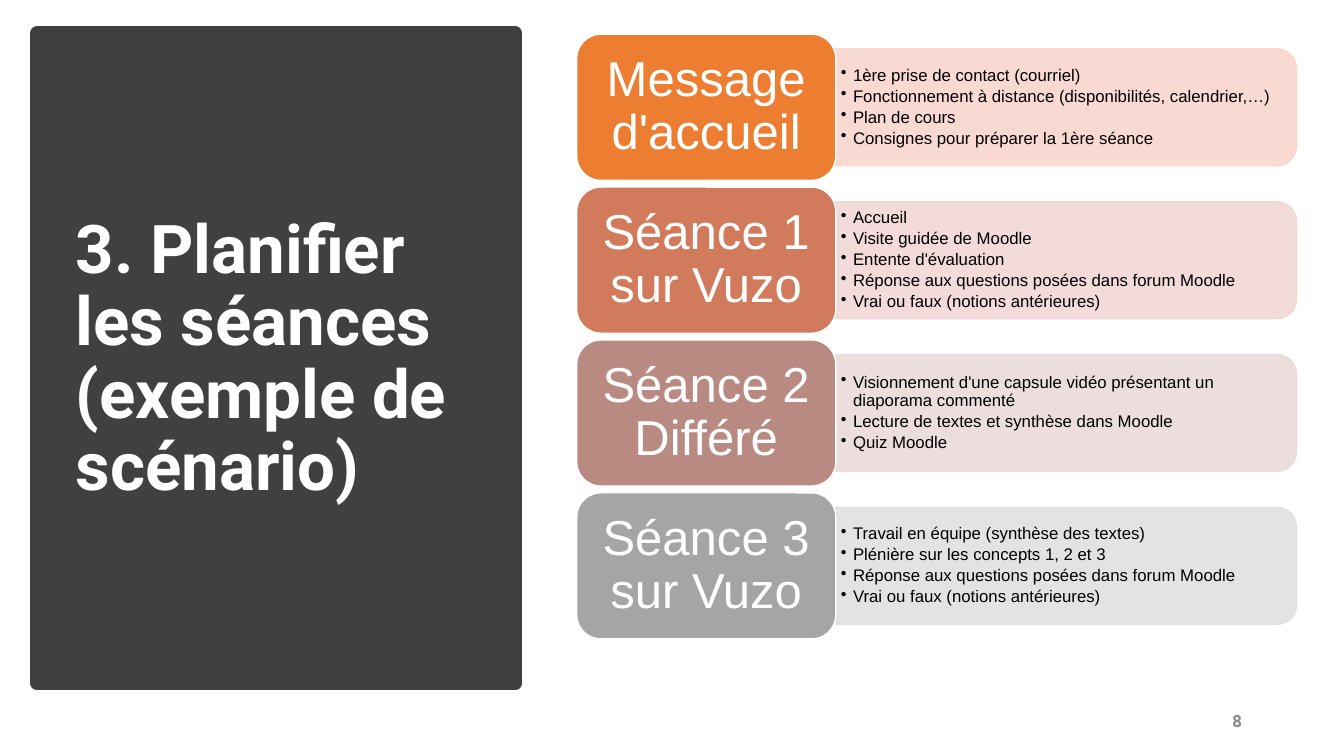
from lxml import etree
from pptx import Presentation, util as u
from pptx.dml.color import RGBColor
from pptx.enum import shapes, text
from pptx.oxml import ns

WHITE = RGBColor(0xFF, 0xFF, 0xFF)
BLACK = RGBColor(0x00, 0x00, 0x00)
DARK = RGBColor(0x40, 0x40, 0x40)
GREY = RGBColor(0x89, 0x89, 0x89)
HEAD = "Roboto"
BODY = "Arial"
KIND = shapes.MSO_SHAPE
ALIGN = text.PP_ALIGN

STEPS = [
    ("Message d'accueil", RGBColor(0xED, 0x7D, 0x31), RGBColor(0xF8, 0xD7, 0xCE), [
        "1ère prise de contact (courriel)",
        "Fonctionnement à distance (disponibilités, calendrier,…)",
        "Plan de cours",
        "Consignes pour préparer la 1ère séance"]),
    ("Séance 1 sur Vuzo", RGBColor(0xD1, 0x7B, 0x5C), RGBColor(0xF1, 0xD8, 0xD4), [
        "Accueil",
        "Visite guidée de Moodle",
        "Entente d'évaluation",
        "Réponse aux questions posées dans forum Moodle",
        "Vrai ou faux (notions antérieures)"]),
    ("Séance 2 Différé", RGBColor(0xB9, 0x8A, 0x82), RGBColor(0xE9, 0xDB, 0xDA), [
        "Visionnement d'une capsule vidéo présentant un diaporama commenté",
        "Lecture de textes et synthèse dans Moodle",
        "Quiz Moodle"]),
    ("Séance 3 sur Vuzo", RGBColor(0xA5, 0xA5, 0xA5), RGBColor(0xE1, 0xE1, 0xE1), [
        "Travail en équipe (synthèse des textes)",
        "Plénière sur les concepts 1, 2 et 3",
        "Réponse aux questions posées dans forum Moodle",
        "Vrai ou faux (notions antérieures)"]),
]


class Deck:
    COLS = ROWS = 100

    def __init__(self):
        self.prs = Presentation()
        self.prs.slide_width = u.Inches(13.33)
        self.prs.slide_height = u.Inches(7.5)
        self.slide = self.prs.slides.add_slide(self.prs.slide_layouts[6])

    def col(self, n):
        return round(self.prs.slide_width * n / self.COLS)

    def row(self, n):
        return round(self.prs.slide_height * n / self.ROWS)

    def area(self, x, y, w, h):
        return self.col(x), self.row(y), self.col(w), self.row(h)

    def shape(self, kind, area, fill, line, width=1, turn=0, alpha=None):
        x, y, w, h = area
        if turn:
            x, y, w, h = x + (w - h) // 2, y + (h - w) // 2, h, w
        item = self.slide.shapes.add_shape(kind, x, y, w, h)
        item.rotation = turn
        item.shadow.inherit = False
        item.fill.solid()
        item.fill.fore_color.rgb = fill
        item.line.color.rgb = line
        item.line.width = u.Pt(width)
        if alpha:
            for tone in item._element.spPr.iter(ns.qn("a:srgbClr")):
                etree.SubElement(tone, ns.qn("a:alpha")).set("val", str(alpha * 1000))
        return item

    def fill_text(self, item, lines, font, size, color, bold=False, align=ALIGN.LEFT,
                  lead=0.9, after=0, pad=(0.75, 0.67), dots=False):
        frame = item.text_frame
        frame.word_wrap = True
        frame.vertical_anchor = text.MSO_ANCHOR.MIDDLE
        frame.margin_left = frame.margin_right = self.col(pad[0])
        frame.margin_top = frame.margin_bottom = self.row(pad[1])
        frame.text = "\n".join(lines)
        for para in frame.paragraphs:
            para.alignment = align
            para.line_spacing = lead
            para.space_after = u.Pt(after)
            if dots:
                self.dot(para)
            for run in para.runs:
                run.font.name = font
                run.font.size = u.Pt(size)
                run.font.bold = bold
                run.font.color.rgb = color

    def dot(self, para):
        props = para._p.get_or_add_pPr()
        dent = self.col(0.9)
        props.set("marL", str(dent))
        props.set("indent", str(-dent))
        etree.SubElement(props, ns.qn("a:buChar")).set("char", "•")

    def label(self, area, lines, *style, **more):
        self.fill_text(self.slide.shapes.add_textbox(*area), lines, *style, **more)

    def step(self, top, name, fill, tint, notes):
        tall, low = 19.33, 15.47
        edge = top + (tall - low) / 2
        self.shape(KIND.ROUND_2_SAME_RECTANGLE, self.area(62.19, edge, 34.28, low),
                   tint, tint, turn=90, alpha=90)
        self.label(self.area(62.19, edge + 0.8, 33.83, low - 1.6), notes, BODY, 12, BLACK,
                   after=2, pad=(0.38, 0.4), dots=True)
        card = self.shape(KIND.ROUNDED_RECTANGLE, self.area(42.91, top, 19.28, tall),
                          fill, WHITE)
        self.fill_text(card, [name], BODY, 35, WHITE, align=ALIGN.CENTER, pad=(1.13, 0.93))


def main():
    deck = Deck()
    deck.shape(KIND.RECTANGLE, deck.area(2.78, 4.4, 35.56, 86), DARK, DARK, width=10)
    deck.label(deck.area(4.88, 9.33, 31.2, 76.67),
               ["3. Planifier les séances (exemple de scénario)"], HEAD, 48, WHITE, bold=True)
    deck.label(deck.area(70.67, 92.67, 22.5, 5.33), ["8"], HEAD, 12, GREY,
               bold=True, align=ALIGN.RIGHT, lead=1, after=6)
    for i, step in enumerate(STEPS):
        deck.step(4.53 + 20.22 * i, *step)
    deck.prs.save("out.pptx")


if __name__ == "__main__":
    main()
